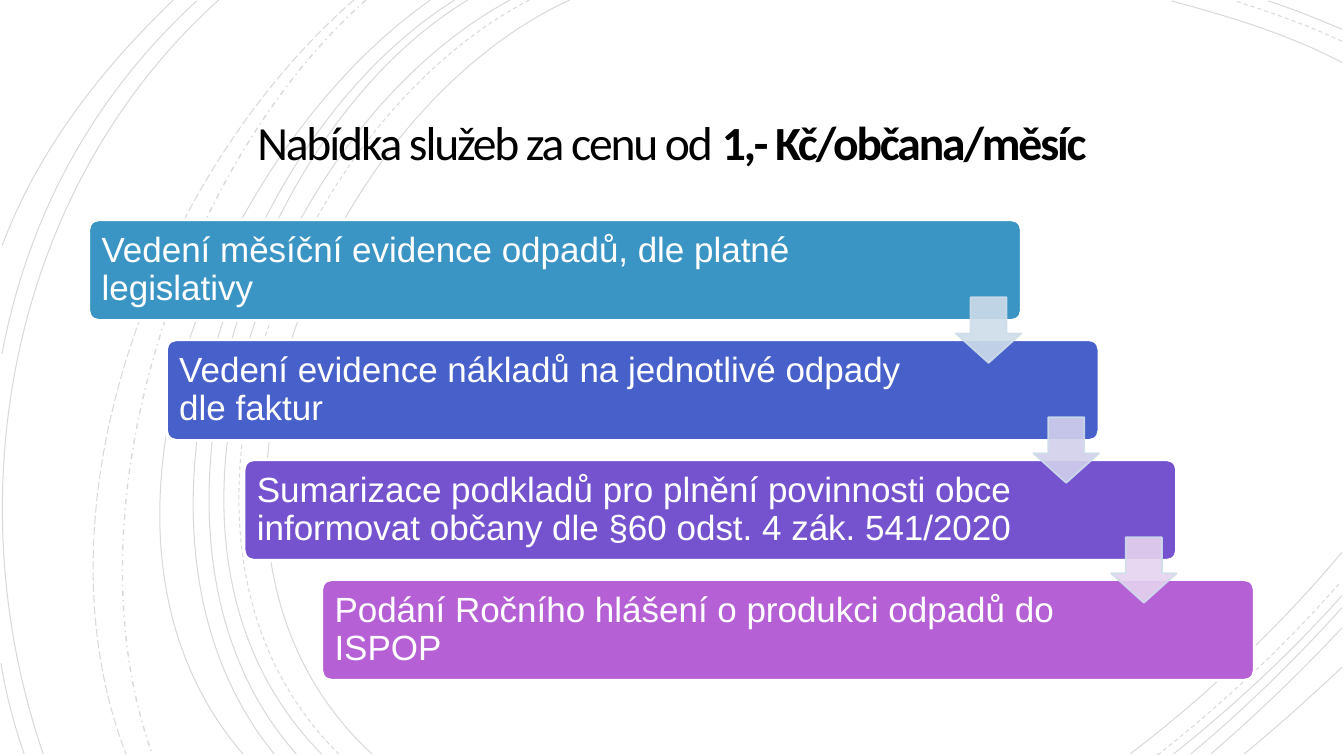
"""Build a slide with a descending staircase of four service steps over thin decorative arcs."""
from lxml.etree import SubElement
from pptx import Presentation
from pptx.dml.color import RGBColor
from pptx.enum.dml import MSO_LINE
from pptx.enum.shapes import MSO_SHAPE
from pptx.enum.text import MSO_ANCHOR, PP_ALIGN
from pptx.oxml.ns import qn
from pptx.util import Inches, Pt

COLORS = {
    "white": "FFFFFF", "black": "000000", "arrow_line": "CEDDEA",
    "blue": "3B95C4", "indigo": "4760CA", "violet": "7553CF", "orchid": "B560D4",
    "pale_blue": "CEDDEA", "pale_indigo": "D2D0EC", "pale_violet": "E5D3EF",
}
TITLE = [("Nabídka služeb za cenu od ", False), ("1,- Kč/občana/měsíc", True)]
STEPS = [
    ("Vedení měsíční evidence odpadů, dle platné legislativy", "blue"),
    ("Vedení evidence nákladů na jednotlivé odpady dle faktur", "indigo"),
    ("Sumarizace podkladů pro plnění povinnosti obce informovat občany "
     "dle §60 odst. 4 zák. 541/2020", "violet"),
    ("Podání Ročního hlášení o produkci odpadů do ISPOP", "orchid"),
]
ARROW_FILLS = ["pale_blue", "pale_indigo", "pale_violet"]
ARCS = {
    (MSO_LINE.SOLID, 0.75): [
        [(5.65, 0), (3.15, 1.15), (1.43, 5.4), (3.69, 7.48)],
        [(13.31, 0.62), (12.78, 0.34), (12.18, 0.16), (11.62, 0.01)],
        [(11.21, 7.48), (11.97, 6.9), (12.69, 6.22), (13.31, 5.48)],
        [(5.06, 0), (2.7, 1.27), (1.1, 5.37), (3.19, 7.48)],
        [(13.31, 0.29), (13.07, 0.19), (12.83, 0.09), (12.58, 0.01)],
        [(11.64, 7.48), (12.23, 7.01), (12.8, 6.48), (13.31, 5.91)],
        [(4.64, 0), (2.44, 1.33), (1.1, 5.41), (2.94, 7.48)],
        [(11.81, 7.48), (12.34, 7.04), (12.84, 6.55), (13.31, 6.03)],
        [(4.51, 0), (2.31, 1.38), (0.97, 5.33), (2.72, 7.48)],
        [(12.01, 7.48), (12.46, 7.09), (12.9, 6.67), (13.31, 6.23)],
        [(4.27, 0), (2.17, 1.47), (0.53, 5.29), (2.41, 7.48)],
        [(12.34, 7.48), (12.67, 7.21), (12.99, 6.92), (13.31, 6.62)],
        [(2.17, 0), (0.11, 1.85), (-0.46, 4.9), (0.43, 7.48)],
        [(1.95, 0.01), (0.92, 0.96), (0.28, 2.14), (0.02, 3.51)],
        [(0.01, 6.58), (0.06, 6.89), (0.14, 7.19), (0.24, 7.48)],
        [(1.72, 0), (1, 0.69), (0.37, 1.5), (0.02, 2.44)],
    ],
    (MSO_LINE.DASH, 0.75): [
        [(5.25, 0), (2.85, 1.25), (1.23, 5.37), (3.36, 7.48)],
        [(13.31, 0.41), (12.97, 0.25), (12.6, 0.12), (12.25, 0.01)],
        [(11.48, 7.49), (12.13, 6.98), (12.75, 6.4), (13.3, 5.77)],
    ],
    (MSO_LINE.DASH_DOT, 1): [[(3.63, 0), (1.76, 1.66), (0.65, 5.09), (1.51, 7.48)]],
    (MSO_LINE.LONG_DASH, 0.75): [[(3.51, 0), (1.57, 1.69), (0.29, 4.99), (1.25, 7.48)]],
}
STEP_LEFT, STEP_TOP = 0.88, 2.18
STEP_WIDTH, STEP_HEIGHT = 9.25, 1
SHIFT_X, SHIFT_Y = 0.77, 1.19
ARROW_SIZE = 0.65
ARROW_DROP = 0.77


def color(name):
    return RGBColor.from_string(COLORS[name])


def set_opacity(shape, percent):
    for element in shape.element.spPr.iter(qn("a:srgbClr")):
        SubElement(element, qn("a:alpha"), val=str(percent * 1000))


def style_line(shape, name, width):
    shape.shadow.inherit = False
    shape.line.color.rgb = color(name)
    shape.line.width = Pt(width)


def add_arc(slide, points, dash, width):
    start, *controls = [(Inches(x), Inches(y)) for x, y in points]
    builder = slide.shapes.build_freeform(*start)
    builder.add_line_segments(controls, close=False)
    arc = builder.convert_to_shape()
    arc.fill.background()
    style_line(arc, "black", width)
    arc.line.dash_style = dash
    set_opacity(arc, 15)
    outline = next(arc.element.iter(qn("a:path")))
    segments = outline.findall(qn("a:lnTo"))
    curve = SubElement(outline, qn("a:cubicBezTo"))
    for segment in segments:
        curve.append(segment[0])
        outline.remove(segment)


def set_margins(frame, margin):
    frame.word_wrap = True
    frame.vertical_anchor = MSO_ANCHOR.MIDDLE
    frame.margin_left = frame.margin_right = Inches(margin)
    frame.margin_top = frame.margin_bottom = Inches(margin)


def add_title(slide):
    box = slide.shapes.add_textbox(Inches(1.92), Inches(0.87), Inches(9.49), Inches(1.15))
    set_margins(box.text_frame, 0.25)
    paragraph = box.text_frame.paragraphs[0]
    paragraph.alignment = PP_ALIGN.CENTER
    paragraph.line_spacing = 0.85
    paragraph.font.size = Pt(34)
    paragraph.font.name = "Calibri"
    paragraph.font.color.rgb = color("black")
    for text, bold in TITLE:
        run = paragraph.add_run()
        run.text = text
        run.font.bold = bold
        run.font.size = Pt(34)
        run.font.name = "Calibri"
        run.font.color.rgb = color("black")
        run.font._element.set("spc", "-150")


def add_step(slide, index, text, fill):
    step = slide.shapes.add_shape(
        MSO_SHAPE.ROUNDED_RECTANGLE,
        Inches(STEP_LEFT + index * SHIFT_X), Inches(STEP_TOP + index * SHIFT_Y),
        Inches(STEP_WIDTH), Inches(STEP_HEIGHT))
    step.adjustments[0] = 0.1
    step.fill.solid()
    step.fill.fore_color.rgb = color(fill)
    style_line(step, "white", 2)
    set_margins(step.text_frame, 0.1)
    step.text_frame.margin_right = Inches(1.5)
    paragraph = step.text_frame.paragraphs[0]
    paragraph.text = text
    paragraph.alignment = PP_ALIGN.LEFT
    paragraph.line_spacing = 0.9
    paragraph.font.size = Pt(25)
    paragraph.font.name = "Arial"
    paragraph.font.color.rgb = color("white")


def add_arrow(slide, index, fill):
    left = STEP_LEFT + index * SHIFT_X + STEP_WIDTH - ARROW_SIZE
    top = STEP_TOP + index * SHIFT_Y + ARROW_DROP
    arrow = slide.shapes.add_shape(
        MSO_SHAPE.DOWN_ARROW, Inches(left), Inches(top), Inches(ARROW_SIZE), Inches(ARROW_SIZE))
    arrow.adjustments[0] = 0.55
    arrow.adjustments[1] = 0.45
    arrow.fill.solid()
    arrow.fill.fore_color.rgb = color(fill)
    style_line(arrow, "arrow_line", 1.25)
    set_opacity(arrow, 90)


def main():
    presentation = Presentation()
    presentation.slide_width = Inches(13.33)
    presentation.slide_height = Inches(7.5)
    slide = presentation.slides.add_slide(presentation.slide_layouts[6])
    slide.background.fill.solid()
    slide.background.fill.fore_color.rgb = color("white")
    for (dash, width), arcs in ARCS.items():
        for points in arcs:
            add_arc(slide, points, dash, width)
    add_title(slide)
    for index, (text, fill) in enumerate(STEPS):
        add_step(slide, index, text, fill)
    for index, fill in enumerate(ARROW_FILLS):
        add_arrow(slide, index, fill)
    presentation.save("out.pptx")


if __name__ == "__main__":
    main()
